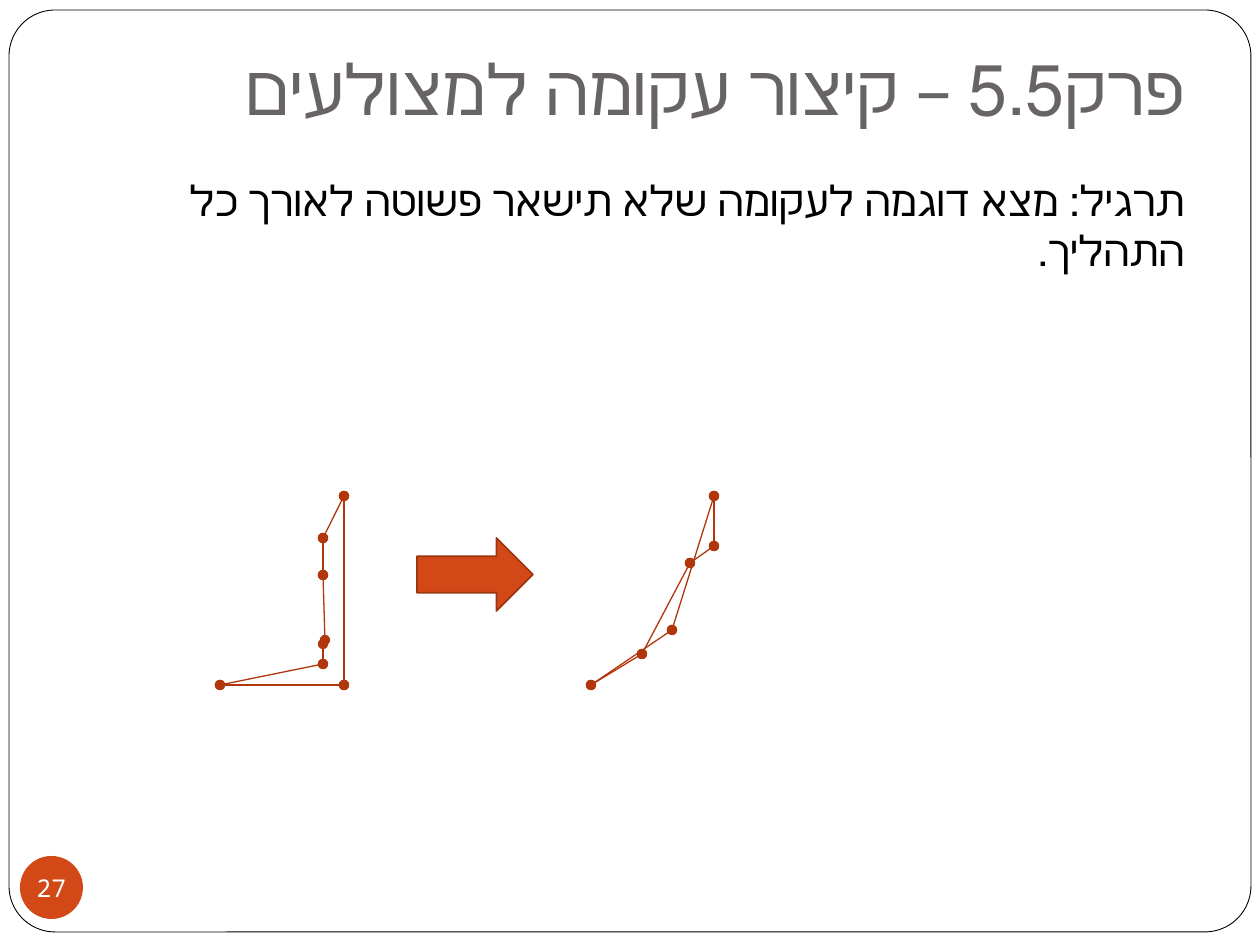
from itertools import pairwise

from lxml import etree
from pptx import Presentation
from pptx import util as u
from pptx.dml.color import RGBColor
from pptx.enum import shapes, text
from pptx.oxml.ns import qn

PX = 914400 // 126
FONT = "Noto Sans Mono"
COLORS = {"paper": "FFFFFF", "ink": "000000", "title": "696464",
          "accent": "D34817", "arrow_edge": "9C3511", "curve": "B1360B"}


def add_filled(kind, box, fill, edge=None, width=1):
    shape = slide.shapes.add_shape(kind, *(n * PX for n in box))
    shape.shadow.inherit = False
    shape.fill.solid()
    shape.fill.fore_color.rgb = RGBColor.from_string(COLORS[fill])
    if edge:
        shape.line.color.rgb = RGBColor.from_string(COLORS[edge])
        shape.line.width = u.Pt(width)
    else:
        shape.line.fill.background()
    return shape


def write(shape, wording, size, color, align, rtl=False):
    paragraph = shape.text_frame.paragraphs[0]
    paragraph.text = wording
    paragraph.alignment = align
    paragraph.font.size = u.Pt(size)
    paragraph.font.name = FONT
    paragraph.font.color.rgb = RGBColor.from_string(COLORS[color])
    if rtl:
        paragraph.font._element.getparent().set("rtl", "1")
    return paragraph


prs = Presentation()
prs.slide_width, prs.slide_height = 1260 * PX, 945 * PX
slide = prs.slides.add_slide(prs.slide_layouts[5])

# Title
title = slide.shapes.title
title.left, title.top, title.width, title.height = (n * PX for n in (126, 32, 1071, 110))
title.text_frame.auto_size = text.MSO_AUTO_SIZE.NONE
title.text_frame.vertical_anchor = text.MSO_ANCHOR.BOTTOM
title.text_frame.margin_bottom = u.Inches(0.1)
write(title, "פרק5.5 – קיצור עקומה למצולעים", 40, "title", text.PP_ALIGN.RIGHT, rtl=True)

# Rounded frame behind everything
frame = add_filled(shapes.MSO_SHAPE.ROUNDED_RECTANGLE, (9, 10, 1242, 922), "paper", "ink", 0.5)
frame.adjustments[0] = 0.05
title.element.addprevious(frame.element)

# Exercise
exercise = slide.shapes.add_textbox(*(n * PX for n in (126, 168, 1071, 661)))
exercise.text_frame.word_wrap = True
question = write(exercise, "תרגיל: מצא דוגמה לעקומה שלא תישאר פשוטה לאורך כל התהליך.",
                 24, "ink", text.PP_ALIGN.RIGHT, rtl=True)
question.space_before = u.Pt(5.8)

# Curve before and after the step, each edge dotted at both ends
simple_curve = [(325, 640), (323, 575), (323, 538), (344, 496),
                (344, 685), (220, 685), (323, 664), (323, 644)]
crossed_curve = [(714, 496), (672, 630), (591, 685), (642, 654),
                 (690, 563), (714, 546), (714, 496)]
for vertices in (simple_curve, crossed_curve):
    for start, end in pairwise(vertices):
        edge = slide.shapes.add_connector(
            shapes.MSO_CONNECTOR.STRAIGHT, *(n * PX for n in start + end))
        edge.line.color.rgb = RGBColor.from_string(COLORS["curve"])
        edge.line.width = u.Pt(0.75)
        for tip in ("a:headEnd", "a:tailEnd"):
            etree.SubElement(edge.line._get_or_add_ln(), qn(tip)).set("type", "oval")
        etree.SubElement(edge.element.spPr, qn("a:effectLst"))

# Arrow from the first curve to the second
add_filled(shapes.MSO_SHAPE.RIGHT_ARROW, (417, 538, 116, 73), "accent", "arrow_edge")

# Page number
badge = add_filled(shapes.MSO_SHAPE.OVAL, (20, 856, 63, 63), "accent")
number = badge.text_frame
number.margin_left = number.margin_right = number.margin_top = number.margin_bottom = 0
number.word_wrap = False
number.vertical_anchor = text.MSO_ANCHOR.MIDDLE
write(badge, "27", 14, "paper", text.PP_ALIGN.CENTER)

prs.save("out.pptx")
